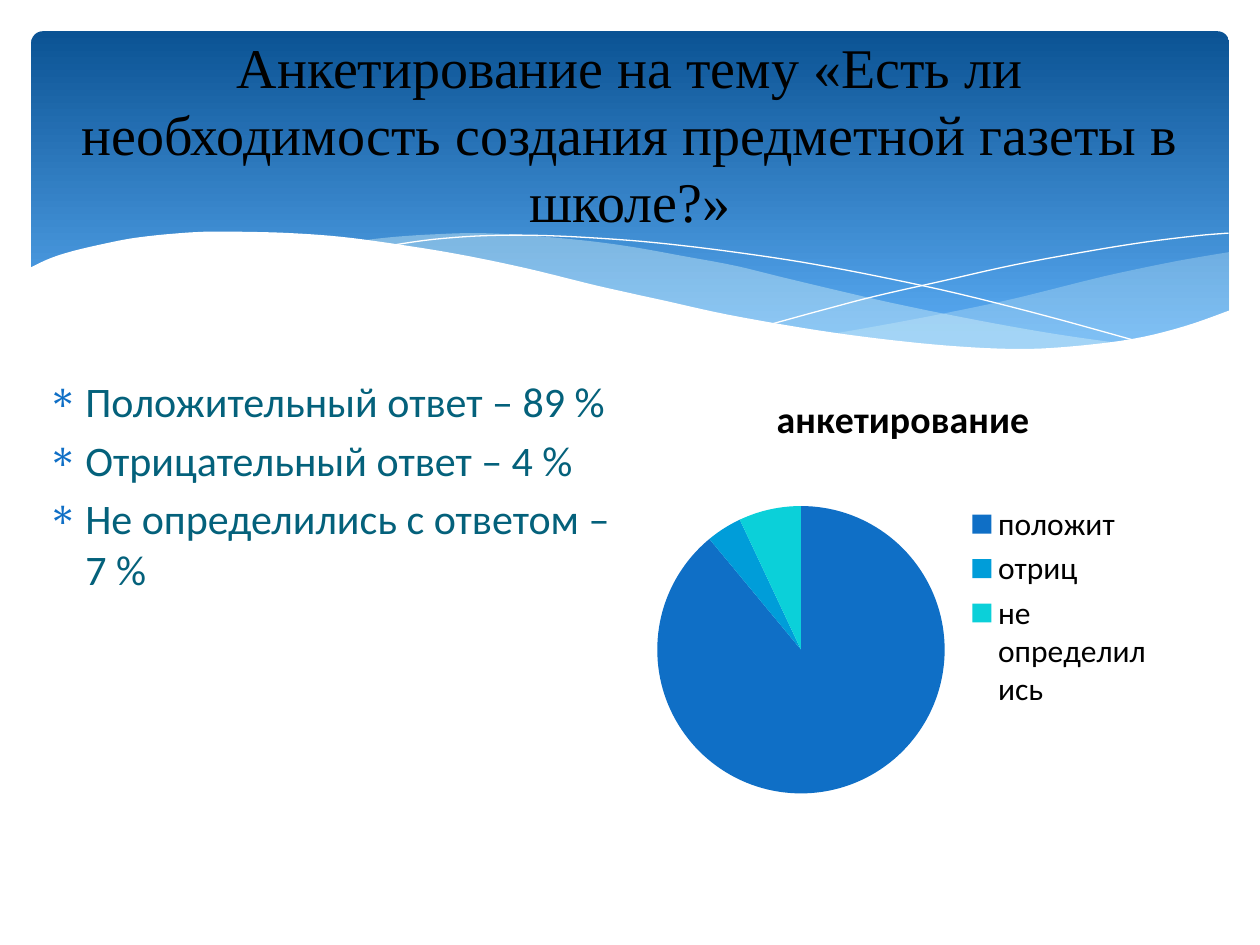
from lxml import etree
from pptx import Presentation
from pptx.chart.data import CategoryChartData
from pptx.dml.color import RGBColor
from pptx.enum.chart import XL_CHART_TYPE, XL_LEGEND_POSITION
from pptx.enum.shapes import MSO_SHAPE
from pptx.enum.text import MSO_ANCHOR, PP_ALIGN
from pptx.oxml.ns import qn
from pptx.util import Cm, Pt

ROUNDED = MSO_SHAPE.ROUNDED_RECTANGLE
PIE = XL_CHART_TYPE.PIE
RIGHT = XL_LEGEND_POSITION.RIGHT
MIDDLE, CENTER = MSO_ANCHOR.MIDDLE, PP_ALIGN.CENTER

TITLE = "Анкетирование на тему «Есть ли необходимость создания предметной газеты в школе?»"
ANSWERS = [
    "Положительный ответ – 89 %",
    "Отрицательный ответ – 4 %",
    "Не определились с ответом – 7 %",
]
CHART_TITLE = "анкетирование"
SLICES = [
    ("положит", 89, "0F6FC6"),
    ("отриц", 4, "009DD9"),
    ("не определились", 7, "0BD0D9"),
]
COLORS = {
    "band_top": "0B5394", "band_bottom": "59AAF2", "mist": "DBF5F9",
    "white": "FFFFFF", "black": "000000", "body": "04617B", "bullet": "0F6FC6",
}

# Wave points count in grid units; each wave is a list of smooth edges.
GRID = Cm(0.0254)
STEPS = 5
WAVES = [
    {"fill": "mist", "alpha": 29, "edges": [
        [(976, 200), (935, 207), (891, 216), (861, 223), (805, 237), (753, 248),
         (706, 257), (661, 265)],
        [(661, 265), (691, 269), (732, 274), (769, 277), (803, 278), (835, 277),
         (872, 274), (905, 269), (935, 262), (963, 252), (976, 247)]]},
    {"fill": "mist", "alpha": 40, "edges": [
        [(893, 273), (837, 265), (775, 254), (706, 240), (629, 222), (584, 211),
         (541, 203), (502, 196), (465, 191), (420, 187), (380, 185), (344, 186),
         (313, 188), (286, 191)],
        [(286, 191), (323, 196), (362, 203), (404, 211), (449, 222), (491, 232),
         (530, 240), (584, 252), (634, 261), (680, 268), (722, 274), (761, 277),
         (796, 278), (838, 278), (867, 276), (893, 273)]]},
    {"line": "white", "edges": [
        [(309, 195), (344, 190), (387, 187), (433, 187), (489, 190), (533, 194),
         (582, 200), (636, 208), (695, 219), (760, 233), (831, 251), (907, 272)]]},
    {"line": "white", "edges": [
        [(613, 257), (653, 246), (695, 235), (748, 223), (806, 210), (866, 199),
         (910, 192), (951, 187), (975, 185)]]},
    {"fill": "white", "edges": [
        [(977, 246), (940, 259), (899, 269), (850, 275), (809, 277), (761, 275),
         (708, 270), (648, 262), (579, 250), (529, 239), (475, 227), (418, 213),
         (365, 202), (316, 194), (271, 188), (230, 185), (193, 184), (161, 184),
         (132, 186), (106, 189), (85, 193), (59, 199), (40, 205), (23, 213)],
        [(23, 329), (977, 329)]]},
]


def rgb(name):
    return RGBColor.from_string(COLORS.get(name, name))


def smooth(points):
    """Return points along a Catmull-Rom curve through the given ones."""
    if len(points) == 2:
        return points
    padded = [points[0], *points, points[-1]]
    curve = [points[0]]
    for a, b, c, d in zip(padded, padded[1:], padded[2:], padded[3:]):
        for step in range(1, STEPS + 1):
            t = step / STEPS
            curve.append(tuple(
                (2 * q + (r - p) * t + (2 * p - 5 * q + 4 * r - s) * t ** 2
                 + (3 * q - p - 3 * r + s) * t ** 3) / 2
                for p, q, r, s in zip(a, b, c, d)))
    return curve


def add_band(shapes):
    sp = shapes.add_shape(ROUNDED, Cm(0.63), Cm(0.63), Cm(24.15), Cm(6.86))
    sp.adjustments[0] = 0.034
    sp.shadow.inherit = False
    sp.line.fill.background()
    sp.fill.gradient()
    sp.fill.gradient_angle = 270
    stops = zip(sp.fill.gradient_stops, (0, 0.9), ("band_top", "band_bottom"))
    for stop, position, color in stops:
        stop.position = position
        stop.color.rgb = rgb(color)


def add_wave(shapes, wave):
    points = [(x * GRID, y * GRID) for edge in wave["edges"] for x, y in smooth(edge)]
    builder = shapes.build_freeform(*points[0], scale=1.0)
    builder.add_line_segments(points[1:], close="fill" in wave)
    sp = builder.convert_to_shape()
    sp.shadow.inherit = False
    if "line" in wave:
        sp.fill.background()
        sp.line.color.rgb = rgb(wave["line"])
        sp.line.width = Pt(0)
        return
    sp.line.fill.background()
    sp.fill.solid()
    sp.fill.fore_color.rgb = rgb(wave["fill"])
    if "alpha" in wave:
        color = sp._element.spPr.find(qn("a:solidFill")).find(qn("a:srgbClr"))
        etree.SubElement(color, qn("a:alpha"), val=str(wave["alpha"] * 1000))


def set_font(font, size, name, color, bold=False):
    font.size, font.name, font.bold = Pt(size), name, bold
    font.color.rgb = rgb(color)


def add_text_frame(shapes, left, top, width, height):
    tf = shapes.add_textbox(Cm(left), Cm(top), Cm(width), Cm(height)).text_frame
    tf.word_wrap = True
    return tf


def add_bullet(p):
    pPr = p._p.get_or_add_pPr()
    pPr.set("marL", str(Cm(0.76)))
    pPr.set("indent", str(Cm(-0.76)))
    color = etree.Element(qn("a:buClr"))
    etree.SubElement(color, qn("a:srgbClr"), val=COLORS["bullet"])
    mark = etree.Element(qn("a:buChar"), char="∗")
    spacing = pPr.find(qn("a:spcBef"))
    spacing.addnext(color)
    color.addnext(mark)


def add_pie(shapes):
    data = CategoryChartData()
    data.categories = [name for name, _, _ in SLICES]
    data.add_series(CHART_TITLE, [value for _, value, _ in SLICES])
    chart = shapes.add_chart(PIE, Cm(12.9), Cm(7.44), Cm(10.62), Cm(9.58), data).chart
    set_font(chart.font, 18, "Calibri", "black")
    chart.has_title = True
    tf = chart.chart_title.text_frame
    tf.text = CHART_TITLE
    set_font(tf.paragraphs[0].font, 21.6, "Calibri", "black", bold=True)
    chart.chart_title.include_in_layout = False
    chart.has_legend = True
    chart.legend.position = RIGHT
    chart.legend.include_in_layout = False
    plot = chart.plots[0]
    plot.vary_by_categories = True
    for i, (_, _, color) in enumerate(SLICES):
        fill = plot.series[0].points[i].format.fill
        fill.solid()
        fill.fore_color.rgb = rgb(color)


prs = Presentation()
prs.slide_width, prs.slide_height = Cm(25.4), Cm(19.05)
shapes = prs.slides.add_slide(prs.slide_layouts[6]).shapes

add_band(shapes)
for wave in WAVES:
    add_wave(shapes, wave)

tf = add_text_frame(shapes, 1.27, 0.94, 22.86, 3.48)
tf.vertical_anchor = MIDDLE
p = tf.paragraphs[0]
p.text = TITLE
p.alignment = CENTER
set_font(p.font, 32, "Times New Roman", "black")

tf = add_text_frame(shapes, 0.71, 7.44, 12.4, 9.58)
for i, answer in enumerate(ANSWERS):
    p = tf.add_paragraph() if i else tf.paragraphs[0]
    p.text = answer
    p.space_before = Pt(4.8)
    set_font(p.font, 24, "Calibri", "body")
    add_bullet(p)

add_pie(shapes)
prs.save("out.pptx")
